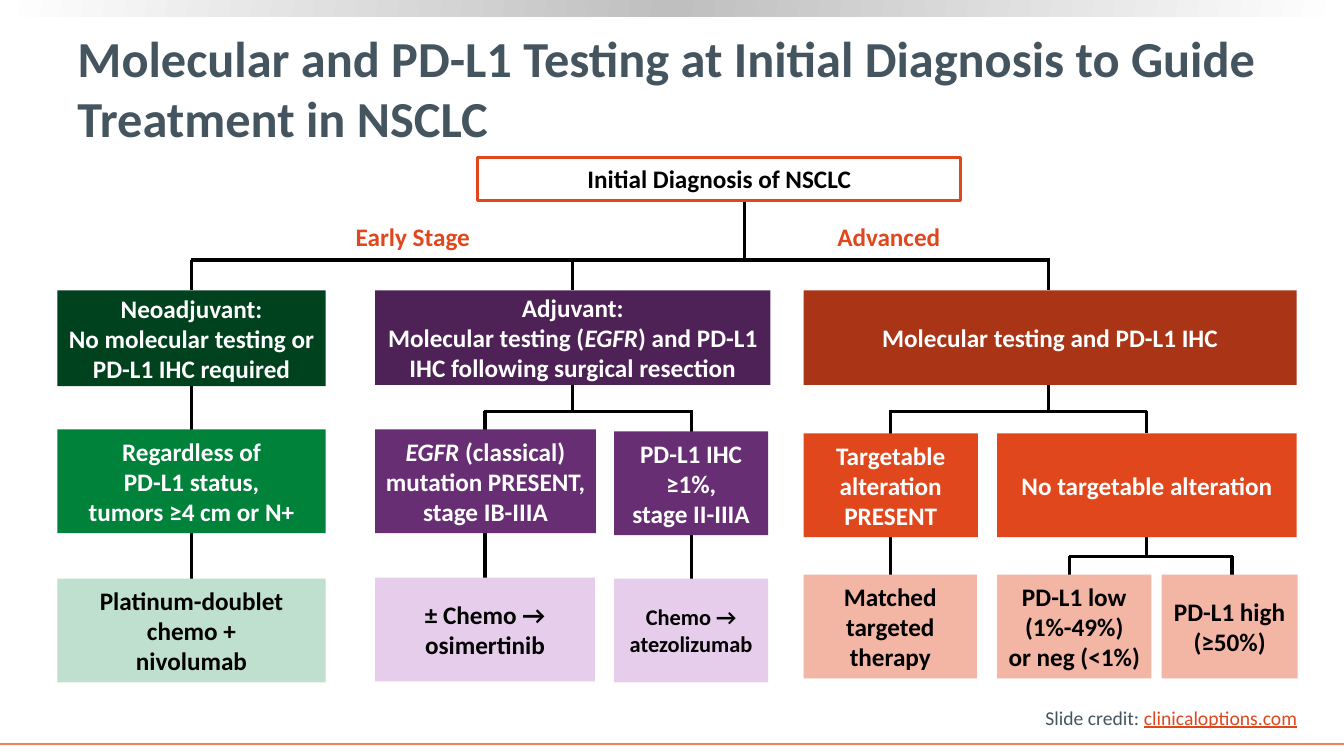
from pptx import Presentation
from pptx.dml.color import RGBColor
from pptx.enum.shapes import MSO_CONNECTOR as Connector, MSO_SHAPE as Preset
from pptx.enum.text import MSO_ANCHOR as Anchor, PP_ALIGN as Align
from pptx.oxml import parse_xml
from pptx.oxml.ns import nsdecls
from pptx.util import Pt

PX = 9144  # 100 px to the inch
WIDTH, HEIGHT = 1333, 750
BRANCH_TOP = 258
COLORS = {
    "white": "FFFFFF", "black": "000000", "gray": "BFBFBF", "slate": "455560",
    "orange": "E1471D", "rust": "A93516", "salmon": "F3B5A4", "coral": "F47D55",
    "plum": "4E2257", "purple": "682E74", "lilac": "E6CDEB",
    "forest": "00411E", "green": "00823B", "mint": "BFE0CE",
}
DARK_TEXT_FILLS = {None, "salmon", "lilac", "mint"}


def rgb(name):
    return RGBColor.from_string(COLORS[name])


def emu(*lengths):
    return [length * PX for length in lengths]


def add_line(slide, start, end, color="black", weight=2.25):
    line = slide.shapes.add_connector(Connector.STRAIGHT, *emu(*start, *end))
    line.line.color.rgb = rgb(color)
    line.line.width = Pt(weight)
    line._element.spPr.append(parse_xml(f"<a:effectLst {nsdecls('a')}/>"))


def add_run(paragraph, text, color, **font_format):
    run = paragraph.add_run()
    run.text = text
    run.font.color.rgb = rgb(color)
    for name, value in {"name": "Calibri", "size": Pt(18), **font_format}.items():
        setattr(run.font, name, value)


def write_lines(frame, text, color, align=Align.CENTER, **font_format):
    """One paragraph per line; text between asterisks is italic."""
    for index, line in enumerate(text.split("\n")):
        paragraph = frame.paragraphs[0] if index == 0 else frame.add_paragraph()
        paragraph.alignment = align
        for part, words in enumerate(line.split("*")):
            if words:
                add_run(paragraph, words, color, bold=True, italic=part % 2 == 1, **font_format)


def add_text(slide, box, text, color, anchor=Anchor.TOP, **text_format):
    frame = slide.shapes.add_textbox(*emu(*box)).text_frame
    frame.word_wrap = True
    frame.vertical_anchor = anchor
    write_lines(frame, text, color, **text_format)


def add_node(slide, box, text, fill=None, size=18):
    shape = slide.shapes.add_shape(Preset.RECTANGLE, *emu(*box))
    shape.shadow.inherit = False
    if fill:
        shape.fill.solid()
        shape.fill.fore_color.rgb = rgb(fill)
        shape.line.fill.background()
    else:
        shape.fill.background()
        shape.line.color.rgb = rgb("orange")
        shape.line.width = Pt(2.25)
    shape.text_frame.word_wrap = True
    shape.text_frame.vertical_anchor = Anchor.MIDDLE
    color = "black" if fill in DARK_TEXT_FILLS else "white"
    write_lines(shape.text_frame, text, color, size=Pt(size))


def add_fork(slide, origin, stem_x, stem_top, bar_y, drops):
    """Stem down to a bar, then a drop from the bar at each x to its bottom y."""
    left, top = origin

    def draw(x1, y1, x2, y2):
        add_line(slide, (left + x1, top + y1), (left + x2, top + y2))

    draw(stem_x, stem_top, stem_x, bar_y)
    if len(drops) > 1:
        draw(min(drops) - 1, bar_y, max(drops) + 1, bar_y)
    for x, bottom in drops.items():
        draw(x, bar_y, x, bottom)


def add_frame(slide):
    # Gradient band along the top edge
    band = slide.shapes.add_shape(Preset.RECTANGLE, *emu(0, 0, WIDTH, 16))
    band.shadow.inherit = False
    band.line.fill.background()
    stops = "".join(
        f'<a:gs pos="{position * 1000}"><a:srgbClr val="{COLORS[name]}"/></a:gs>'
        for position, name in ((0, "white"), (50, "gray"), (100, "white")))
    band._element.spPr.prstGeom.addnext(parse_xml(
        f"<a:gradFill {nsdecls('a')}><a:gsLst>{stops}</a:gsLst>"
        '<a:lin ang="11400000" scaled="0"/></a:gradFill>'))
    # Rule along the bottom edge
    add_line(slide, (0, 738), (WIDTH, 738), "coral", 1.5)


def add_credit(slide, box):
    frame = slide.shapes.add_textbox(*emu(*box)).text_frame
    frame.word_wrap = False
    paragraph = frame.paragraphs[0]
    add_run(paragraph, "Slide credit: ", "slate", size=Pt(14))
    add_run(paragraph, "clinicaloptions.com", "orange", size=Pt(14), underline=True)


def add_diagnosis(slide, box):
    left, top, width, height = box
    add_fork(slide, (left, top), 264, height, 102, {-284: 132, 94: 132, 566: 132})
    add_node(slide, box, "Initial Diagnosis of NSCLC")
    add_text(slide, (left - 168, top + 59, 207, 40), "Early Stage", "orange")
    add_text(slide, (left + 320, top + 59, 175, 40), "Advanced", "orange")


def add_branch(slide, origin, forks, nodes):
    left, top = origin
    for fork in forks:
        add_fork(slide, origin, *fork)
    for (x, y, width, height), *content in nodes:
        add_node(slide, (left + x, top + y, width, height), *content)


# Each branch: left edge, forks, nodes
BRANCHES = [
    (57, [(133, 125, 150, {133: 316})], [
        ((0, 30, 266, 95), "Neoadjuvant:\nNo molecular testing or\nPD-L1 IHC required", "forest"),
        ((0, 168, 266, 103), "Regardless of\nPD-L1 status,\ntumors ≥4 cm or N+", "green"),
        ((0, 316, 266, 103), "Platinum-doublet chemo +\nnivolumab", "mint"),
    ]),
    (372, [(196, 124, 150, {109: 315, 314: 316})], [
        ((0, 30, 392, 94), "Adjuvant:\nMolecular testing (*EGFR*) and PD-L1 "
                           "IHC following surgical resection", "plum"),
        ((0, 168, 219, 103), "*EGFR* (classical) mutation PRESENT, stage IB-IIIA", "purple"),
        ((237, 170, 153, 103), "PD-L1 IHC ≥1%,\nstage II-IIIA", "purple"),
        ((0, 315, 218, 103), "± Chemo →\nosimertinib", "lilac"),
        ((237, 316, 153, 103), "Chemo →\natezolizumab", "lilac", 16),
    ]),
    (797, [(243, 124, 150, {86: 312, 340: 172}),
           (340, 275, 294, {264: 312, 425: 312})], [
        ((0, 30, 489, 94), "Molecular testing and PD-L1 IHC", "rust"),
        ((0, 172, 173, 103), "Targetable alteration\nPRESENT", "orange"),
        ((192, 172, 297, 103), "No targetable alteration", "orange"),
        ((0, 312, 172, 103), "Matched targeted therapy", "salmon"),
        ((192, 312, 153, 103), "PD-L1 low (1%-49%)\nor neg (<1%)", "salmon"),
        ((355, 312, 135, 103), "PD-L1 high\n(≥50%)", "salmon"),
    ]),
]


def main():
    presentation = Presentation()
    presentation.slide_width, presentation.slide_height = emu(WIDTH, HEIGHT)
    slide = presentation.slides.add_slide(presentation.slide_layouts[6])
    add_frame(slide)
    add_credit(slide, (1027, 695, 272, 34))
    add_text(slide, (67, 26, 1218, 121),
             "Molecular and PD-L1 Testing at Initial Diagnosis to Guide Treatment in NSCLC",
             "slate", Anchor.MIDDLE, align=Align.LEFT, size=Pt(36))
    add_diagnosis(slide, (474, 156, 479, 43))
    for left, forks, nodes in BRANCHES:
        add_branch(slide, (left, BRANCH_TOP), forks, nodes)
    presentation.save("out.pptx")


if __name__ == "__main__":
    main()
